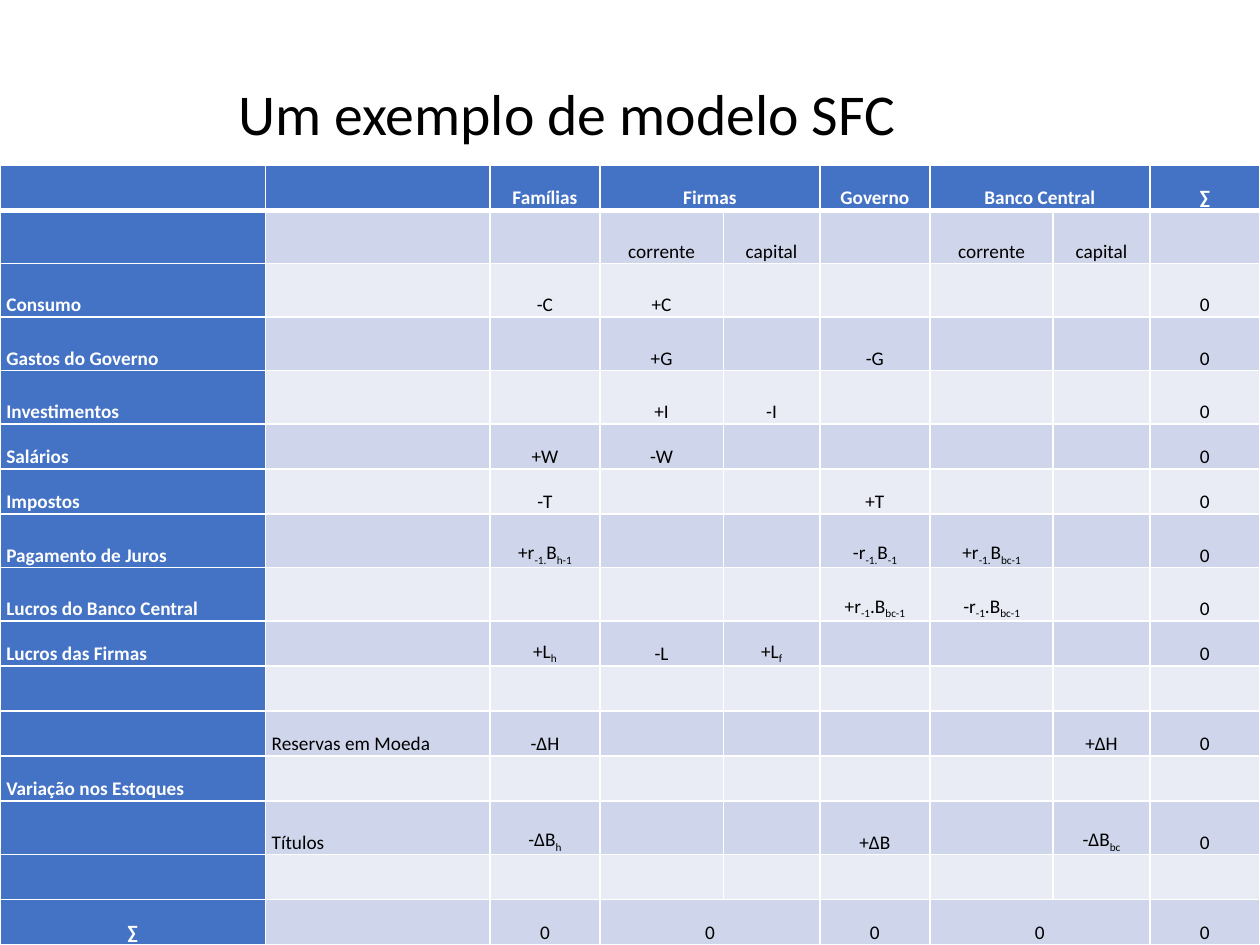
from pptx import Presentation
from pptx.dml.color import RGBColor
from pptx.enum.text import MSO_ANCHOR as ANCHOR, MSO_AUTO_SIZE as AUTOFIT, PP_ALIGN as ALIGN
from pptx.oxml.ns import qn
from pptx.util import Pt
from lxml.etree import SubElement

# Content: braces mark subscripts
TITLE = "Um exemplo de modelo SFC"
TALL, SHORT = 30.55, 25.75
ROWS = [  # (row height, cell texts by column)
    (SHORT, ["", "", "Famílias", "Firmas", "", "Governo", "Banco Central", "", "∑"]),
    (TALL, ["", "", "", "corrente", "capital", "", "corrente", "capital", ""]),
    (TALL, ["Consumo", "", "-C", "+C", "", "", "", "", "0"]),
    (TALL, ["Gastos do Governo", "", "", "+G", "", "-G", "", "", "0"]),
    (TALL, ["Investimentos", "", "", "+I", "-I", "", "", "", "0"]),
    (SHORT, ["Salários", "", "+W", "-W", "", "", "", "", "0"]),
    (SHORT, ["Impostos", "", "-T", "", "", "+T", "", "", "0"]),
    (TALL, ["Pagamento de Juros", "", "+r{-1.}B{h-1}", "", "", "-r{-1.}B{-1}",
            "+r{-1.}B{bc-1}", "", "0"]),
    (TALL, ["Lucros do Banco Central", "", "", "", "", "+r{-1}.B{bc-1}",
            "-r{-1}.B{bc-1}", "", "0"]),
    (SHORT, ["Lucros das Firmas", "", "+L{h}", "-L", "+L{f}", "", "", "", "0"]),
    (SHORT, [""] * 9),
    (SHORT, ["", "Reservas em Moeda", "-ΔH", "", "", "", "", "+ΔH", "0"]),
    (SHORT, ["Variação nos Estoques"] + [""] * 8),
    (TALL, ["", "Títulos", "-ΔB{h}", "", "", "+ΔB", "", "-ΔB{bc}", "0"]),
    (SHORT, [""] * 9),
    (SHORT, ["∑", "", "0", "0", "", "0", "0", "", "0"]),
]
SECTOR, CURRENT, CAPITAL = 62.86, 70.5, 55.2
COLS = [151.7, 128.3, SECTOR, CURRENT, CAPITAL, SECTOR, CURRENT, CAPITAL, SECTOR]
LAST = len(ROWS) - 1
MERGES = [(r, c) for r in (0, LAST) for c in (3, 6)]  # each spans two columns

THEME = {
    "font": "Calibri", "title": 33, "body": 11,
    "ink": "000000", "white": "FFFFFF", "head": "4472C4",
    "bands": ("E9EBF5", "CFD5EA"), "line": 1, "head_line": 3,
}


def write(tf, text, size=THEME["body"], color=THEME["ink"], bold=False,
          align=ALIGN.CENTER, spacing=1.15):
    p = tf.paragraphs[0]
    p.alignment, p.line_spacing = align, spacing
    for i, part in enumerate(text.replace("}", "{").split("{")):
        if not part:
            continue
        r = p.add_run()
        r.text = part
        r.font.name, r.font.size, r.font.bold = THEME["font"], Pt(size), bold
        r.font.color.rgb = RGBColor.from_string(color)
        if i % 2:
            r.font._element.set("baseline", "-25000")


def set_borders(cell, **widths):
    tc_pr = cell._tc.get_or_add_tcPr()
    for side in "LRTB":
        width = Pt(widths.get(side, THEME["line"]))
        ln = SubElement(tc_pr, qn(f"a:ln{side}"), w=str(int(width)))
        fill = SubElement(ln, qn("a:solidFill"))
        SubElement(fill, qn("a:srgbClr"), val=THEME["white"])


def format_cell(cell, row, col, text):
    is_head = row == 0 or col == 0
    cell.margin_left = cell.margin_right = Pt(3.6)
    cell.margin_top = cell.margin_bottom = 0
    cell.vertical_anchor = ANCHOR.BOTTOM
    # A thick rule separates the header row from the body
    thick = {0: {"B": THEME["head_line"]}, 1: {"T": THEME["head_line"]}}
    set_borders(cell, **thick.get(row, {}))
    cell.fill.solid()
    fill = THEME["head"] if is_head else THEME["bands"][row % 2]
    cell.fill.fore_color.rgb = RGBColor.from_string(fill)
    if text:
        is_label = col < 2 and row < LAST
        write(cell.text_frame, text, bold=is_head,
              color=THEME["white"] if is_head else THEME["ink"],
              align=ALIGN.LEFT if is_label else ALIGN.CENTER)


def main():
    prs = Presentation()
    prs.slide_width, prs.slide_height = Pt(720), Pt(540)
    slide = prs.slides.add_slide(prs.slide_layouts[5])

    # Title
    title = slide.shapes.title
    title.left, title.top, title.width, title.height = Pt(0), Pt(21.6), Pt(648), Pt(90)
    tf = title.text_frame
    tf.vertical_anchor, tf.auto_size = ANCHOR.MIDDLE, AUTOFIT.NONE
    write(tf, TITLE, size=THEME["title"], spacing=0.9)

    # Transactions matrix
    height = sum(h for h, _ in ROWS)
    table = slide.shapes.add_table(len(ROWS), len(COLS), Pt(0), Pt(94.4),
                                   Pt(720), Pt(height)).table
    table.first_col = True
    for col, width in zip(table.columns, COLS):
        col.width = Pt(width)
    for i, (row_height, texts) in enumerate(ROWS):
        table.rows[i].height = Pt(row_height)
        for j, text in enumerate(texts):
            format_cell(table.cell(i, j), i, j, text)
    for i, j in MERGES:
        table.cell(i, j).merge(table.cell(i, j + 1))

    prs.save("out.pptx")


if __name__ == "__main__":
    main()
